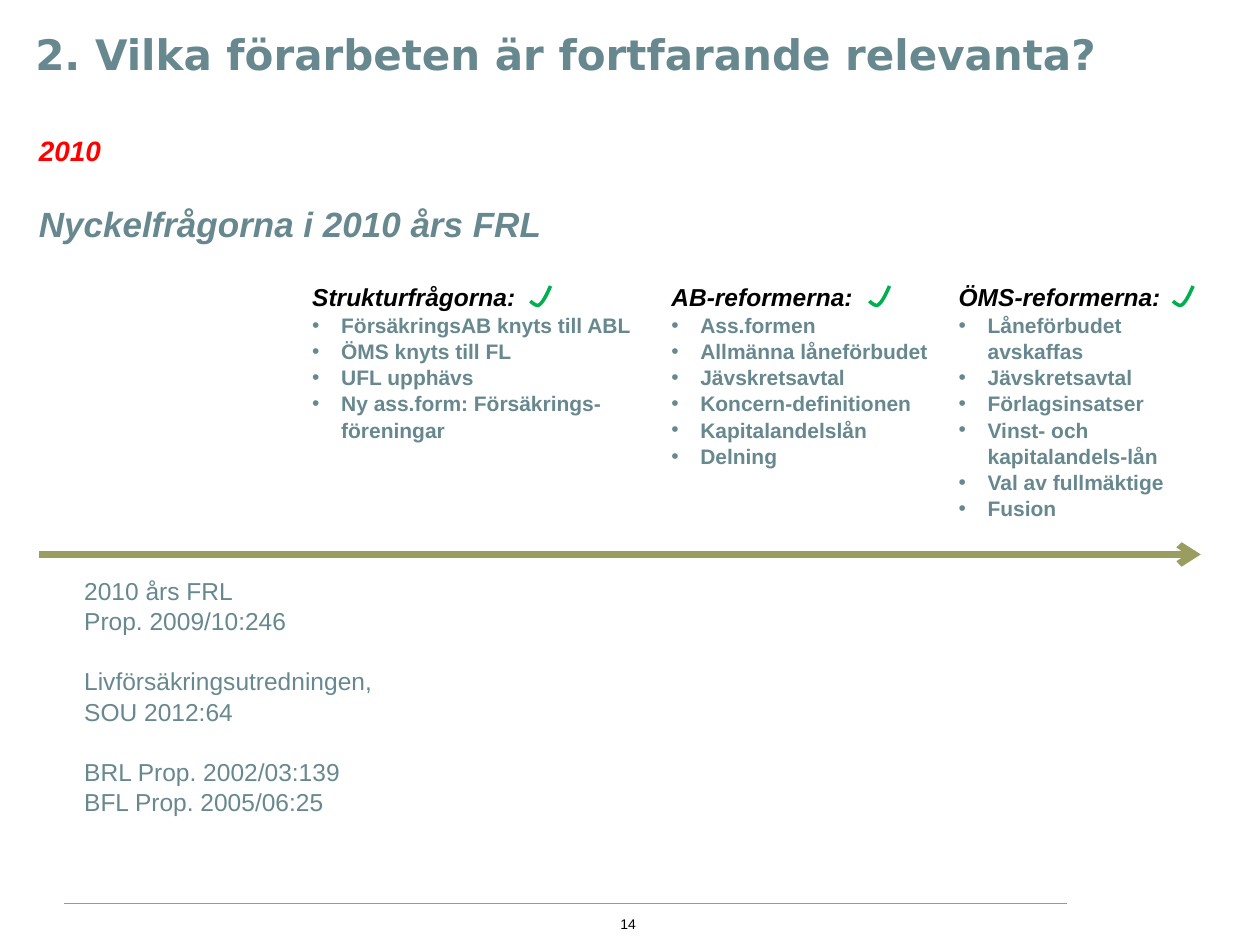
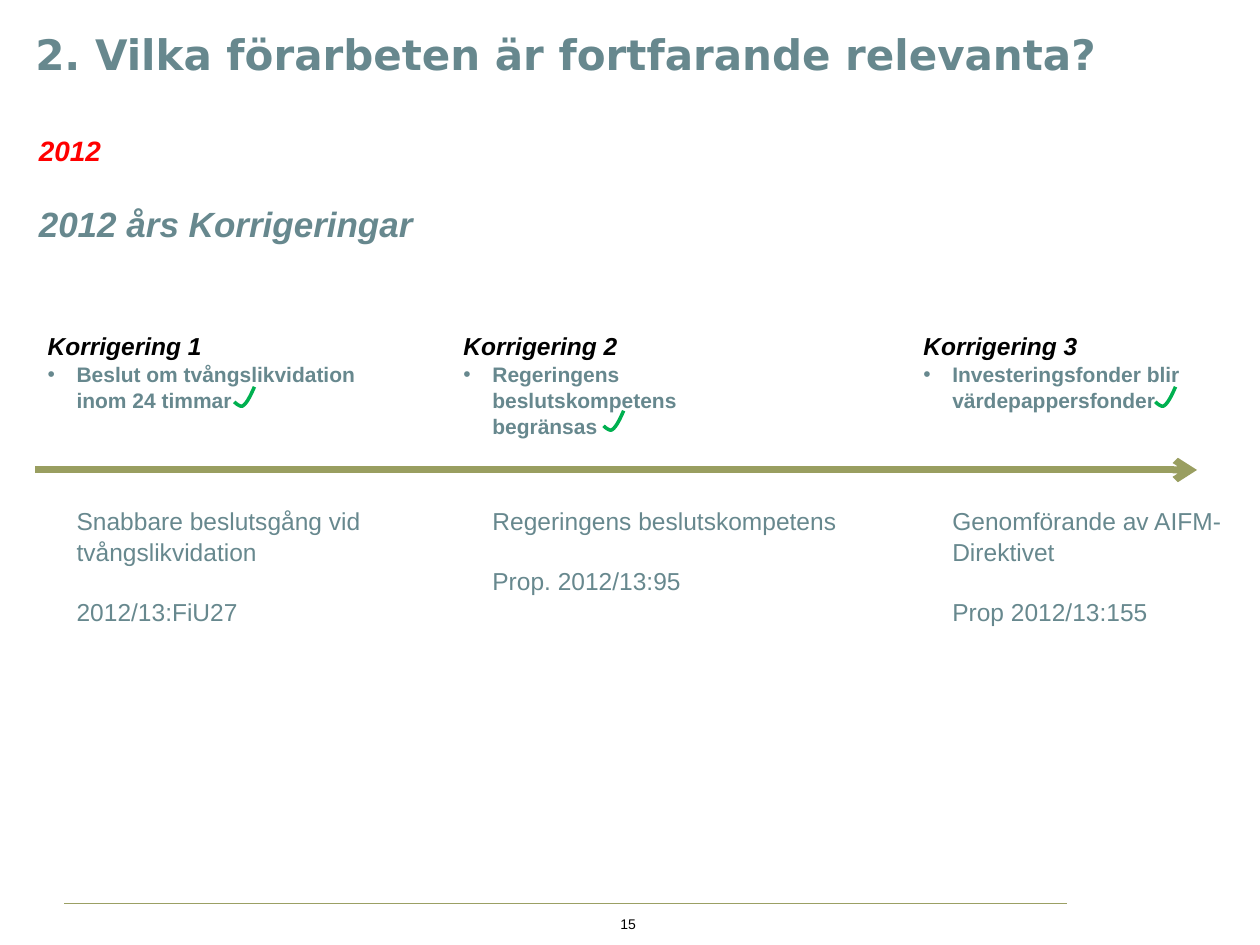
from lxml import etree
from pptx import Presentation
from pptx import util as u
from pptx.dml.color import RGBColor
from pptx.enum import shapes, text
from pptx.oxml.ns import qn

TEAL = RGBColor(0x67, 0x88, 0x8E)
RED = RGBColor(0xFF, 0x00, 0x00)
BLACK = RGBColor(0x00, 0x00, 0x00)
GREEN = RGBColor(0x00, 0xB0, 0x50)
OLIVE = RGBColor(0x99, 0x9E, 0x60)
FOOTER_OLIVE = RGBColor(0x9B, 0xA0, 0x64)

BODY_FONT = "Arial"
TITLE_FONT = "DejaVu Sans"
TITLE = "2. Vilka förarbeten är fortfarande relevanta?"
LINE_SPACING = 1.04
TICK_CURVES = [
    [(0.16, 0), (0.13, 0.07), (0.1, 0.13), (0.07, 0.15)],
    [(0.07, 0.15), (0.05, 0.17), (0, 0.12), (0, 0.12)],
]
CURVE_STEPS = 8


def curve_point(controls, t):
    weights = [(1 - t) ** 3, 3 * t * (1 - t) ** 2, 3 * t ** 2 * (1 - t), t ** 3]
    return tuple(sum(w * point[axis] for w, point in zip(weights, controls)) for axis in (0, 1))


class TimelineDeck:
    def __init__(self):
        self.presentation = Presentation()
        self.presentation.slide_width = u.Inches(10)
        self.presentation.slide_height = u.Inches(7.5)
        self.slide = None

    def start_slide(self, number, year, heading, arrow_left, arrow_top):
        self.slide = self.presentation.slides.add_slide(self.presentation.slide_layouts[5])
        self.line(0.51, 7.17, 8.47, FOOTER_OLIVE, 0.75)
        self.arrow(arrow_left, arrow_top)
        self.title()
        self.year_heading(year, heading)
        self.page_number(number)

    def format_paragraph(self, paragraph, size, color, bold=False, italic=False, font=BODY_FONT):
        for run in paragraph.runs:
            run.font.name = font
            run.font.size = u.Pt(size)
            run.font.color.rgb = color
            run.font.bold = bold
            run.font.italic = italic

    def text_box(self, left, top, width, height, lines):
        box = self.slide.shapes.add_textbox(
            u.Inches(left), u.Inches(top), u.Inches(width), u.Inches(height))
        frame = box.text_frame
        frame.word_wrap = True
        frame.text = "\n".join(lines)
        for paragraph in frame.paragraphs:
            paragraph.line_spacing = LINE_SPACING
        return frame

    def title(self):
        shape = self.slide.shapes.title
        shape.left, shape.top = u.Inches(0.28), u.Inches(0.12)
        shape.width, shape.height = u.Inches(8.98), u.Inches(0.56)
        frame = shape.text_frame
        frame.text = TITLE
        frame.word_wrap = True
        frame.auto_size = text.MSO_AUTO_SIZE.NONE
        frame.vertical_anchor = text.MSO_ANCHOR.BOTTOM
        frame.margin_left = frame.margin_right = 0
        frame.paragraphs[0].alignment = text.PP_ALIGN.LEFT
        self.format_paragraph(frame.paragraphs[0], 24, TEAL, bold=True, font=TITLE_FONT)

    def year_heading(self, year, heading):
        frame = self.text_box(0.21, 1, 7.14, 0.98, [year, heading])
        first, second = frame.paragraphs
        self.format_paragraph(first, 16, RED, bold=True, italic=True)
        self.format_paragraph(second, 20, TEAL, bold=True, italic=True)
        second.space_before = u.Pt(19)

    def page_number(self, number):
        frame = self.text_box(4.65, 7.24, 0.67, 0.18, [str(number)])
        frame.margin_left = frame.margin_right = frame.margin_top = frame.margin_bottom = 0
        frame.vertical_anchor = text.MSO_ANCHOR.MIDDLE
        frame.paragraphs[0].alignment = text.PP_ALIGN.CENTER
        self.format_paragraph(frame.paragraphs[0], 8, BLACK)

    def line(self, left, top, right, color, width):
        connector = self.slide.shapes.add_connector(
            shapes.MSO_CONNECTOR.STRAIGHT,
            u.Inches(left), u.Inches(top), u.Inches(right), u.Inches(top))
        connector.line.color.rgb = color
        connector.line.width = u.Pt(width)
        etree.SubElement(connector._element.spPr, qn("a:effectLst"))
        return connector

    def arrow(self, left, top):
        connector = self.line(left, top, left + 9.22, OLIVE, 4)
        etree.SubElement(connector.line._get_or_add_ln(), qn("a:tailEnd"), type="arrow")

    def topic(self, left, top, width, height, heading, bullets):
        frame = self.text_box(left, top, width, height, [heading, *bullets])
        self.format_paragraph(frame.paragraphs[0], 14, BLACK, bold=True, italic=True)
        for paragraph in frame.paragraphs[1:]:
            properties = paragraph._p.get_or_add_pPr()
            properties.set("marL", str(u.Inches(0.23)))
            properties.set("indent", str(u.Inches(-0.23)))
            etree.SubElement(properties, qn("a:buFont"), typeface=BODY_FONT)
            etree.SubElement(properties, qn("a:buChar"), char="•")
            self.format_paragraph(paragraph, 12, TEAL, bold=True)

    def sources(self, left, top, width, groups):
        frame = self.text_box(left, top, width, 1.24, [line for group in groups for line in group])
        paragraphs = iter(frame.paragraphs)
        for group_index, group in enumerate(groups):
            for line_index in range(len(group)):
                paragraph = next(paragraphs)
                self.format_paragraph(paragraph, 14, TEAL)
                if group_index and not line_index:
                    paragraph.space_before = u.Pt(16.8)

    def tick(self, left, top):
        points = [curve_point(curve, step / CURVE_STEPS)
                  for curve in TICK_CURVES for step in range(CURVE_STEPS + 1)]
        outline = [(u.Inches(left + x), u.Inches(top + y)) for x, y in points]
        builder = self.slide.shapes.build_freeform(*outline[0])
        builder.add_line_segments(outline[1:], close=False)
        shape = builder.convert_to_shape()
        shape.shadow.inherit = False
        shape.fill.background()
        shape.line.color.rgb = GREEN
        shape.line.width = u.Pt(2)


def add_2010_slide(deck):
    deck.start_slide(14, "2010", "Nyckelfrågorna i 2010 års FRL", 0.31, 4.4)
    deck.sources(0.57, 4.51, 2.94, [
        ["2010 års FRL", "Prop. 2009/10:246"],
        ["Livförsäkringsutredningen, SOU 2012:64"],
        ["BRL Prop. 2002/03:139", "BFL Prop. 2005/06:25"],
    ])
    topics = [
        (2.38, 2.77, 4.21, "Strukturfrågorna:", [
            "FörsäkringsAB knyts till ABL", "ÖMS knyts till FL", "UFL upphävs",
            "Ny ass.form: Försäkrings-föreningar"]),
        (5.23, 2.27, 6.9, "AB-reformerna:", [
            "Ass.formen", "Allmänna låneförbudet", "Jävskretsavtal",
            "Koncern-definitionen", "Kapitalandelslån", "Delning"]),
        (7.51, 2.21, 9.31, "ÖMS-reformerna:", [
            "Låneförbudet avskaffas", "Jävskretsavtal", "Förlagsinsatser",
            "Vinst- och kapitalandels-lån", "Val av fullmäktige", "Fusion"]),
    ]
    for left, width, tick_left, heading, bullets in topics:
        deck.topic(left, 2.18, width, 1.93, heading, bullets)
        deck.tick(tick_left, 2.27)


def add_2012_slide(deck):
    deck.start_slide(15, "2012", "2012 års Korrigeringar", 0.28, 3.73)
    corrections = [
        (0.28, 2.77, (1.86, 3.07), "Beslut om tvångslikvidation inom 24 timmar",
         2.94, [["Snabbare beslutsgång vid tvångslikvidation"], ["2012/13:FiU27"]]),
        (3.58, 2.27, (4.79, 3.26), "Regeringens beslutskompetens begränsas",
         2.94, [["Regeringens beslutskompetens"], ["Prop. 2012/13:95"]]),
        (7.23, 2.77, (9.17, 3.07), "Investeringsfonder blir värdepappersfonder",
         2.54, [["Genomförande av AIFM-", "Direktivet"], ["Prop 2012/13:155"]]),
    ]
    for number, correction in enumerate(corrections, 1):
        left, width, tick_place, bullet, sources_width, groups = correction
        deck.topic(left, 2.57, width, 1.1, f"Korrigering {number}", [bullet])
        deck.sources(left + 0.23, 3.96, sources_width, groups)
        deck.tick(*tick_place)


def main():
    deck = TimelineDeck()
    add_2010_slide(deck)
    add_2012_slide(deck)
    deck.presentation.save("out.pptx")


if __name__ == "__main__":
    main()
